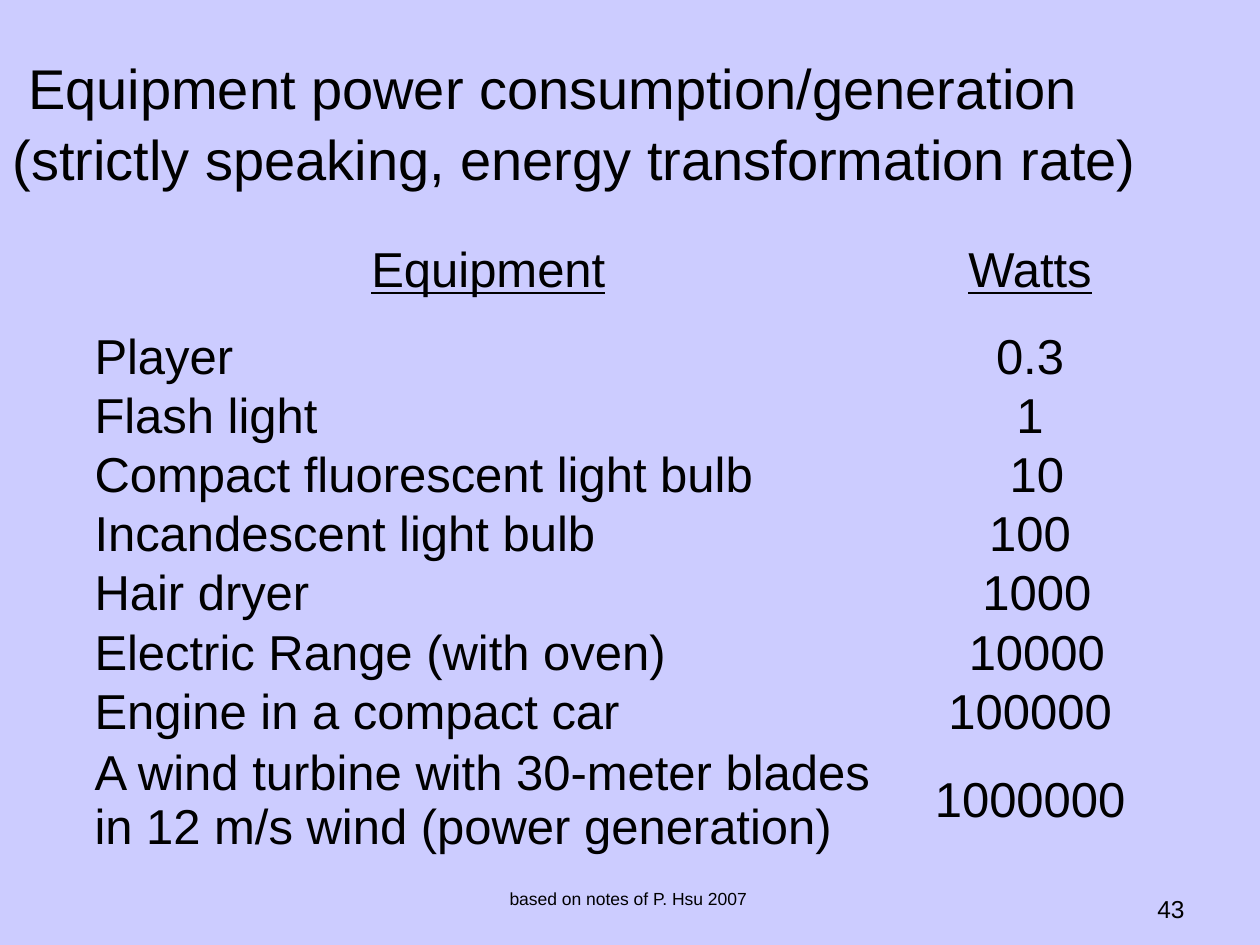
from typing import NamedTuple

from pptx import Presentation
from pptx.dml.color import RGBColor
from pptx.enum.text import MSO_ANCHOR as Anchor, MSO_AUTO_SIZE as AutoSize, PP_ALIGN as Align
from pptx.util import Inches, Pt

COLORS = {"background": "CCCCFF", "text": "000000"}
FONT = "Arial"
NO_GRID_STYLE = "{2D5ABB26-0587-4C30-8999-92F81FD0307C}"


class Equipment(NamedTuple):
    name: str
    watts: str
    height: float = 0.47


class Note(NamedTuple):
    text: str
    box: tuple[float, float, float, float]
    size: int
    align: Align


HEADER = Equipment("Equipment", "Watts", 0.9)
ROWS = [
    HEADER,
    Equipment("Player", "0.3"),
    Equipment("Flash light", "1"),
    Equipment("Compact fluorescent light bulb", " 10"),
    Equipment("Incandescent light bulb", "100"),
    Equipment("Hair dryer", " 1000"),
    Equipment("Electric Range (with oven)", " 10000"),
    Equipment("Engine in a compact car", "100000"),
    Equipment("A wind turbine with 30-meter blades in 12 m/s wind (power generation)",
              "1000000", 0.93),
]
COLUMN_WIDTHS = (6.25, 2.35)
TITLE_LINES = (" Equipment power consumption/generation",
               "(strictly speaking, energy transformation rate)")
NOTES = [
    Note("based on notes of P. Hsu 2007", (3.4, 7, 3.17, 0.37), 10, Align.CENTER),
    Note("43", (7.17, 7.05, 2.33, 0.3), 14, Align.RIGHT),
]


def add_text(paragraph, text: str, size: int, align: Align, underline: bool = False) -> None:
    paragraph.alignment = align
    run = paragraph.add_run()
    run.text = text
    run.font.name = FONT
    run.font.size = Pt(size)
    run.font.underline = underline
    run.font.color.rgb = RGBColor.from_string(COLORS["text"])


def set_title(title) -> None:
    title.left, title.top = Inches(0), Inches(0.35)
    title.width, title.height = Inches(10), Inches(1.78)
    frame = title.text_frame
    frame.auto_size = AutoSize.NONE
    frame.word_wrap = True
    frame.vertical_anchor = Anchor.TOP
    for index, line in enumerate(TITLE_LINES):
        paragraph = frame.add_paragraph() if index else frame.paragraphs[0]
        paragraph.line_spacing = 1.05
        add_text(paragraph, line, 32, Align.LEFT)


def add_equipment_table(slide) -> None:
    shape = slide.shapes.add_table(
        len(ROWS), len(COLUMN_WIDTHS), Inches(0.75), Inches(1.7),
        Inches(sum(COLUMN_WIDTHS)), Inches(sum(row.height for row in ROWS)))
    table = shape.table
    table.horz_banding = table.first_row = False
    # The plain style has neither fills nor borders
    table._tbl.tblPr[0].text = NO_GRID_STYLE
    for column, width in zip(table.columns, COLUMN_WIDTHS):
        column.width = Inches(width)
    for row_index, row in enumerate(ROWS):
        is_header = row is HEADER
        table.rows[row_index].height = Inches(row.height)
        for column_index, text in enumerate((row.name, row.watts)):
            cell = table.cell(row_index, column_index)
            cell.fill.background()
            cell.margin_left = cell.margin_right = 0
            cell.margin_top = cell.margin_bottom = 0
            cell.vertical_anchor = Anchor.MIDDLE
            align = Align.CENTER if is_header or column_index else Align.LEFT
            add_text(cell.text_frame.paragraphs[0], text, 28, align, underline=is_header)


def add_note(slide, note: Note) -> None:
    box = slide.shapes.add_textbox(*map(Inches, note.box))
    box.text_frame.word_wrap = True
    add_text(box.text_frame.paragraphs[0], note.text, note.size, note.align)


def main() -> None:
    presentation = Presentation()
    presentation.slide_width, presentation.slide_height = Inches(10), Inches(7.5)
    slide = presentation.slides.add_slide(presentation.slide_layouts[5])

    # Background
    fill = slide.background.fill
    fill.solid()
    fill.fore_color.rgb = RGBColor.from_string(COLORS["background"])

    # Title, table, footer
    set_title(slide.shapes.title)
    add_equipment_table(slide)
    for note in NOTES:
        add_note(slide, note)

    presentation.save("out.pptx")


if __name__ == "__main__":
    main()
